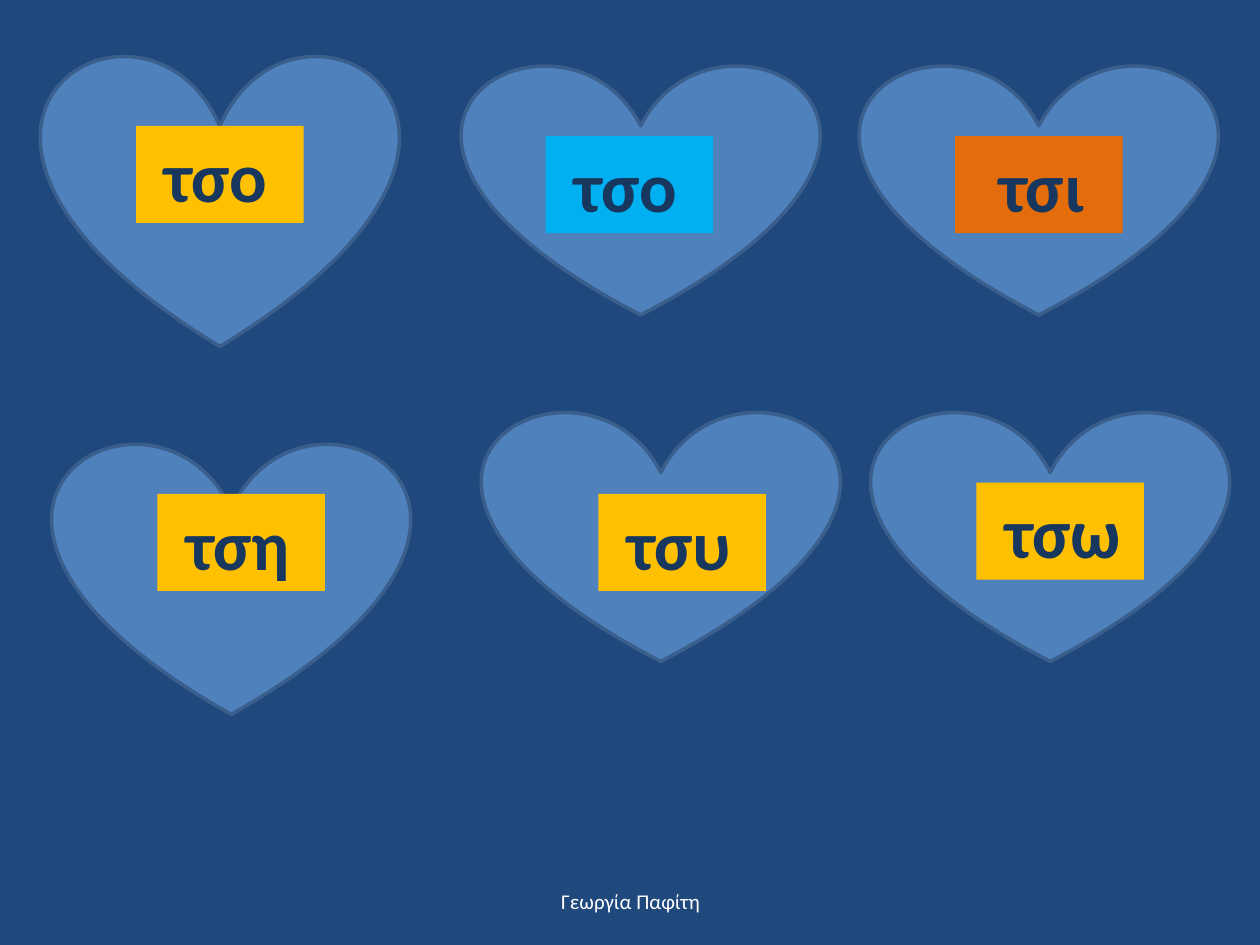
from pptx import Presentation
from pptx import util as u
from pptx.dml.color import RGBColor
from pptx.enum import shapes, text

HUES = {"back": "1F497D", "heart": "4F81BD", "edge": "3A5F8C", "ink": "17375E",
        "gold": "FFC000", "sky": "00B0F0", "rust": "E46C0A", "white": "FFFFFF"}
HEART_W, TAG_W, TAG_H = 2.83, 1.33, 0.77
# heart left, top, height; tag offset x, y; tag hue; syllable; indent
CARDS = [
    (0.33, 0.42, 2.33, 0.75, 0.58, "gold", "τσο", 0.13),
    (3.67, 0.5, 2, 0.66, 0.58, "sky", "τσο", 0.13),
    (6.83, 0.5, 2, 0.75, 0.58, "rust", "τσι", 0.25),
    (0.42, 3.5, 2.17, 0.83, 0.42, "gold", "τση", 0.13),
    (3.83, 3.25, 2, 0.92, 0.67, "gold", "τσυ", 0.13),
    (6.92, 3.25, 2, 0.83, 0.58, "gold", "τσω", 0.13),
]


def color(name):
    return RGBColor.from_string(HUES[name])


def apply(item, form):
    for key, value in form.items():
        setattr(item, key, value)


def add_solid(slide, kind, box, hue):
    shape = slide.shapes.add_shape(kind, *map(u.Inches, box))
    shape.shadow.inherit = False
    shape.fill.solid()
    shape.fill.fore_color.rgb = color(hue)
    return shape


def add_words(shape, words, hue, align, font, frame):
    apply(shape.text_frame, {"word_wrap": True, **frame})
    para = shape.text_frame.paragraphs[0]
    para.alignment = align
    run = para.add_run()
    run.text = words
    apply(run.font, {"name": "Calibri", **font})
    run.font.color.rgb = color(hue)


def add_heart(slide, box):
    heart = add_solid(slide, shapes.MSO_SHAPE.HEART, box, "heart")
    heart.line.color.rgb = color("edge")
    heart.line.width = u.Pt(2)


def add_tag(slide, box, hue, words, indent):
    tag = add_solid(slide, shapes.MSO_SHAPE.RECTANGLE, box, hue)
    tag.line.fill.background()
    add_words(tag, words, "ink", text.PP_ALIGN.LEFT,
              {"size": u.Pt(40), "bold": True},
              {"margin_left": u.Inches(0.1 + indent), "margin_right": 0,
               "vertical_anchor": text.MSO_ANCHOR.TOP,
               "auto_size": text.MSO_AUTO_SIZE.SHAPE_TO_FIT_TEXT})


def add_card(slide, left, top, high, dx, dy, hue, words, indent):
    """Heart with a syllable tag placed relative to its corner."""
    add_heart(slide, (left, top, HEART_W, high))
    add_tag(slide, (left + dx, top + dy, TAG_W, TAG_H), hue, words, indent)


def add_footer(slide, box):
    foot = slide.shapes.add_textbox(*map(u.Inches, box))
    add_words(foot, "Γεωργία Παφίτη", "white", text.PP_ALIGN.CENTER,
              {"size": u.Pt(12)}, {"vertical_anchor": text.MSO_ANCHOR.MIDDLE})


def main():
    deck = Presentation()
    apply(deck, {"slide_width": u.Inches(10), "slide_height": u.Inches(7.5)})
    slide = deck.slides.add_slide(deck.slide_layouts[6])
    slide.background.fill.solid()
    slide.background.fill.fore_color.rgb = color("back")
    add_footer(slide, (3.42, 6.95, 3.17, 0.4))
    for card in CARDS:
        add_card(slide, *card)
    deck.save("out.pptx")


if __name__ == "__main__":
    main()
